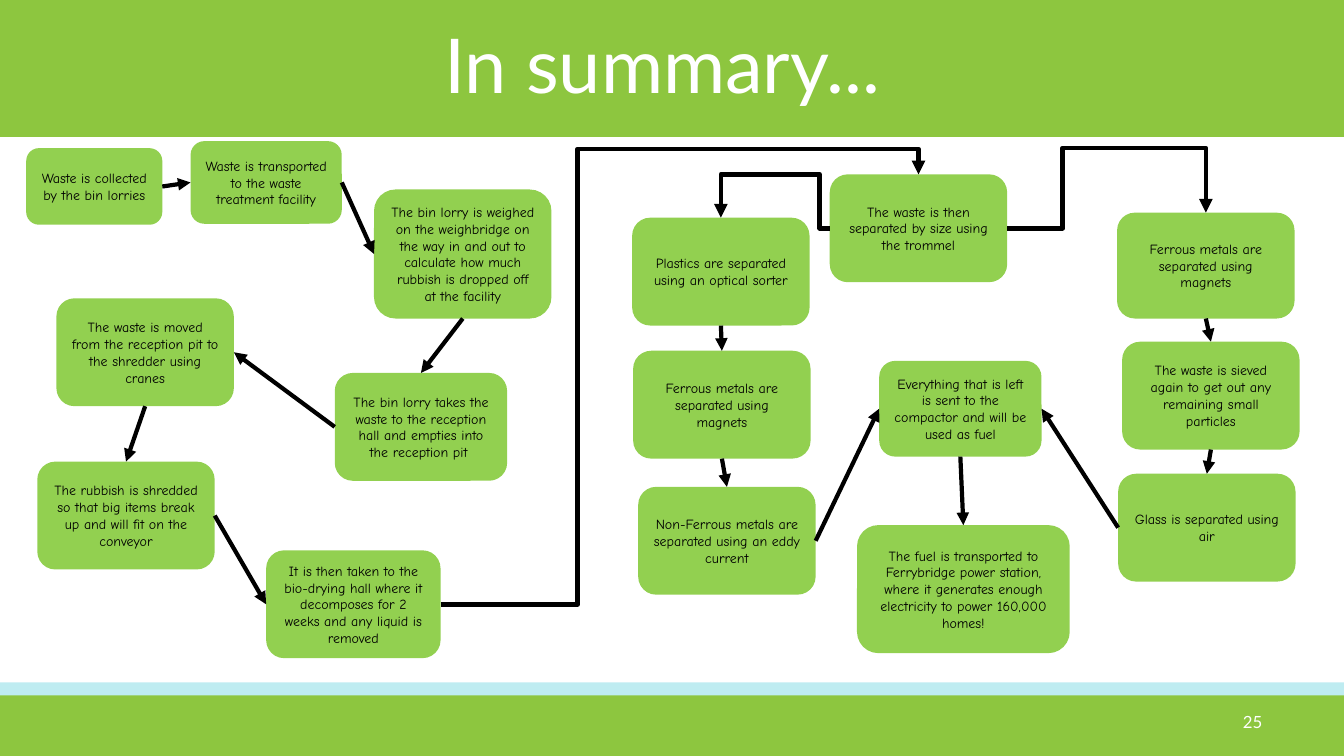
from collections import namedtuple

from lxml.etree import SubElement
from pptx import Presentation
from pptx.dml.color import RGBColor
from pptx.enum.shapes import MSO_CONNECTOR as LINK, MSO_SHAPE as SHAPE
from pptx.enum.text import MSO_ANCHOR as ANCHOR, MSO_AUTO_SIZE as FIT, PP_ALIGN as ALIGN
from pptx.oxml.ns import qn
from pptx.util import Emu, Pt

PX = 9144
Box = namedtuple("Box", "left top width height")
TOP, LEFT, BOTTOM, RIGHT = range(4)
GREEN, LIME, TEAL = "8DC63F", "92D050", "20BFD0"
WHITE, BLACK = "FFFFFF", "000000"

PAGE = Box(0, 0, 1333, 750)
HEADER = Box(0, 0, 1333, 136)
FOOTER = Box(0, 677, 1333, 76)
INTAKE = Box(26, 140, 521, 513)
RECOVERY = Box(627, 173, 662, 475)

INTAKE_STEPS = {
    "collected": (Box(0, 7, 135, 76), "Waste is collected by the bin lorries"),
    "transported": (Box(163, 0, 150, 82), "Waste is transported to the waste treatment facility"),
    "weighed": (Box(345, 48, 176, 128),
                "The bin lorry is weighed on the weighbridge on the way in and out to "
                "calculate how much rubbish is dropped off at the facility"),
    "emptied": (Box(306, 230, 171, 107),
                "The bin lorry takes the waste to the reception hall and empties into "
                "the reception pit "),
    "moved": (Box(30, 156, 176, 107),
              "The waste is moved from the reception pit to the shredder using cranes"),
    "shredded": (Box(11, 318, 176, 107),
                 "The rubbish is shredded so that big items break up and will fit on the conveyor"),
    "dried": (Box(238, 406, 173, 107),
              "It is then taken to the bio-drying hall where it decomposes for 2 weeks "
              "and any liquid is removed"),
}
RECOVERY_STEPS = {
    "trommel": (Box(196, 0, 176, 107), "The waste is then separated by size using the trommel"),
    "plastics": (Box(0, 43, 176, 107), "Plastics are separated using an optical sorter"),
    "ferrous": (Box(1, 175, 176, 107), "Ferrous metals are separated using magnets"),
    "nonferrous": (Box(6, 310, 176, 107),
                   "Non-Ferrous metals are separated using an eddy current"),
    "glass": (Box(482, 297, 176, 107), "Glass is separated using air"),
    "magnets": (Box(481, 38, 176, 105), "Ferrous metals are separated using magnets"),
    "sieved": (Box(486, 166, 176, 107),
               "The waste is sieved again to get out any remaining small particles"),
    "compactor": (Box(245, 185, 161, 95),
                  "Everything that is left is sent to the compactor and will be used as fuel"),
    "fuel": (Box(223, 348, 211, 127),
             "The fuel is transported to Ferrybridge power station, where it generates "
             "enough electricity to power 160,000 homes!"),
}
ARROWS = [
    ("collected", RIGHT, "transported", LEFT),
    ("transported", RIGHT, "weighed", LEFT),
    ("weighed", BOTTOM, "emptied", TOP),
    ("emptied", LEFT, "moved", RIGHT),
    ("moved", BOTTOM, "shredded", TOP),
    ("shredded", RIGHT, "dried", LEFT),
    ("plastics", BOTTOM, "ferrous", TOP),
    ("ferrous", BOTTOM, "nonferrous", TOP),
    ("magnets", BOTTOM, "sieved", TOP),
    ("sieved", BOTTOM, "glass", TOP),
    ("nonferrous", RIGHT, "compactor", LEFT),
    ("glass", LEFT, "compactor", RIGHT),
    ("compactor", BOTTOM, "fuel", TOP),
]
ELBOWS = [
    ("dried", RIGHT, "trommel", TOP, 573, 148),
    ("trommel", RIGHT, "magnets", TOP, 1054, 147),
    ("trommel", LEFT, "plastics", TOP, 813, 173),
]


def px(value):
    return Emu(round(value * PX))


def color(code):
    return RGBColor.from_string(code)


def inside(region, part):
    return Box(region.left + part.left, region.top + part.top, part.width, part.height)


def write(frame, text, font, size, code, align):
    frame.word_wrap = True
    frame.auto_size = FIT.NONE
    frame.vertical_anchor = ANCHOR.MIDDLE
    paragraph = frame.paragraphs[0]
    paragraph.alignment = align
    run = paragraph.add_run()
    run.text = text
    run.font.name = font
    run.font.size = Pt(size)
    run.font.color.rgb = color(code)
    return paragraph


def add_block(slide, kind, box, code):
    block = slide.shapes.add_shape(kind, *map(px, box))
    block.shadow.inherit = False
    block.fill.solid()
    block.fill.fore_color.rgb = color(code)
    block.line.fill.background()
    return block


def draw_header(slide, box):
    add_block(slide, SHAPE.RECTANGLE, box, GREEN)
    title = slide.shapes.title
    title.left, title.top, title.width, title.height = map(px, box)
    heading = write(title.text_frame, "In summary... ", "Lato", 54, WHITE, ALIGN.CENTER)
    heading.line_spacing = 0.9
    title.element.getparent().append(title.element)


def draw_footer(slide, box):
    stripe = add_block(slide, SHAPE.RECTANGLE, inside(box, Box(0, 0, box.width, 24)), TEAL)
    tint = stripe.element.spPr.find(qn("a:solidFill"))[0]
    SubElement(tint, qn("a:alpha"), val="29000")
    add_block(slide, SHAPE.RECTANGLE, inside(box, Box(0, 13, box.width, 63)), GREEN)
    number = slide.shapes.add_textbox(*map(px, inside(box, Box(962, 19, 300, 40))))
    write(number.text_frame, "25", "Lato", 12, WHITE, ALIGN.RIGHT)


def draw_steps(slide, region, steps):
    drawn = {}
    for key, (part, text) in steps.items():
        step = add_block(slide, SHAPE.ROUNDED_RECTANGLE, inside(region, part), LIME)
        write(step.text_frame, text, "Comic Neue", 10, BLACK, ALIGN.CENTER)
        drawn[key] = step
    return drawn


def join(slide, kind, source, source_side, target, target_side, weight):
    arrow = slide.shapes.add_connector(kind, 0, 0, 0, 0)
    arrow.begin_connect(source, source_side)
    arrow.end_connect(target, target_side)
    arrow.line.color.rgb = color(BLACK)
    arrow.line.width = Pt(weight)
    SubElement(arrow.line._get_or_add_ln(), qn("a:tailEnd"), type="triangle")
    SubElement(arrow.element.spPr, qn("a:effectLst"))
    return arrow


def bend(arrow, turn_x, turn_y):
    across = (px(turn_x) - arrow.begin_x) / (arrow.end_x - arrow.begin_x)
    down = (px(turn_y) - arrow.begin_y) / (arrow.end_y - arrow.begin_y)
    geometry = arrow.element.spPr.find(qn("a:prstGeom"))
    geometry.set("prst", "bentConnector4")
    guides = geometry.find(qn("a:avLst"))
    for name, share in (("adj1", across), ("adj2", down)):
        SubElement(guides, qn("a:gd"), name=name, fmla=f"val {round(share * 100000)}")


def draw_arrows(slide, steps):
    for source, source_side, target, target_side in ARROWS:
        join(slide, LINK.STRAIGHT, steps[source], source_side, steps[target], target_side, 3)
    for source, source_side, target, target_side, turn_x, turn_y in ELBOWS:
        elbow = join(slide, LINK.ELBOW, steps[source], source_side,
                     steps[target], target_side, 3.25)
        bend(elbow, turn_x, turn_y)


def main():
    deck = Presentation()
    deck.slide_width, deck.slide_height = px(PAGE.width), px(PAGE.height)
    slide = deck.slides.add_slide(deck.slide_layouts[5])
    draw_footer(slide, FOOTER)
    draw_header(slide, HEADER)
    steps = draw_steps(slide, INTAKE, INTAKE_STEPS)
    steps.update(draw_steps(slide, RECOVERY, RECOVERY_STEPS))
    draw_arrows(slide, steps)
    deck.save("out.pptx")


if __name__ == "__main__":
    main()
